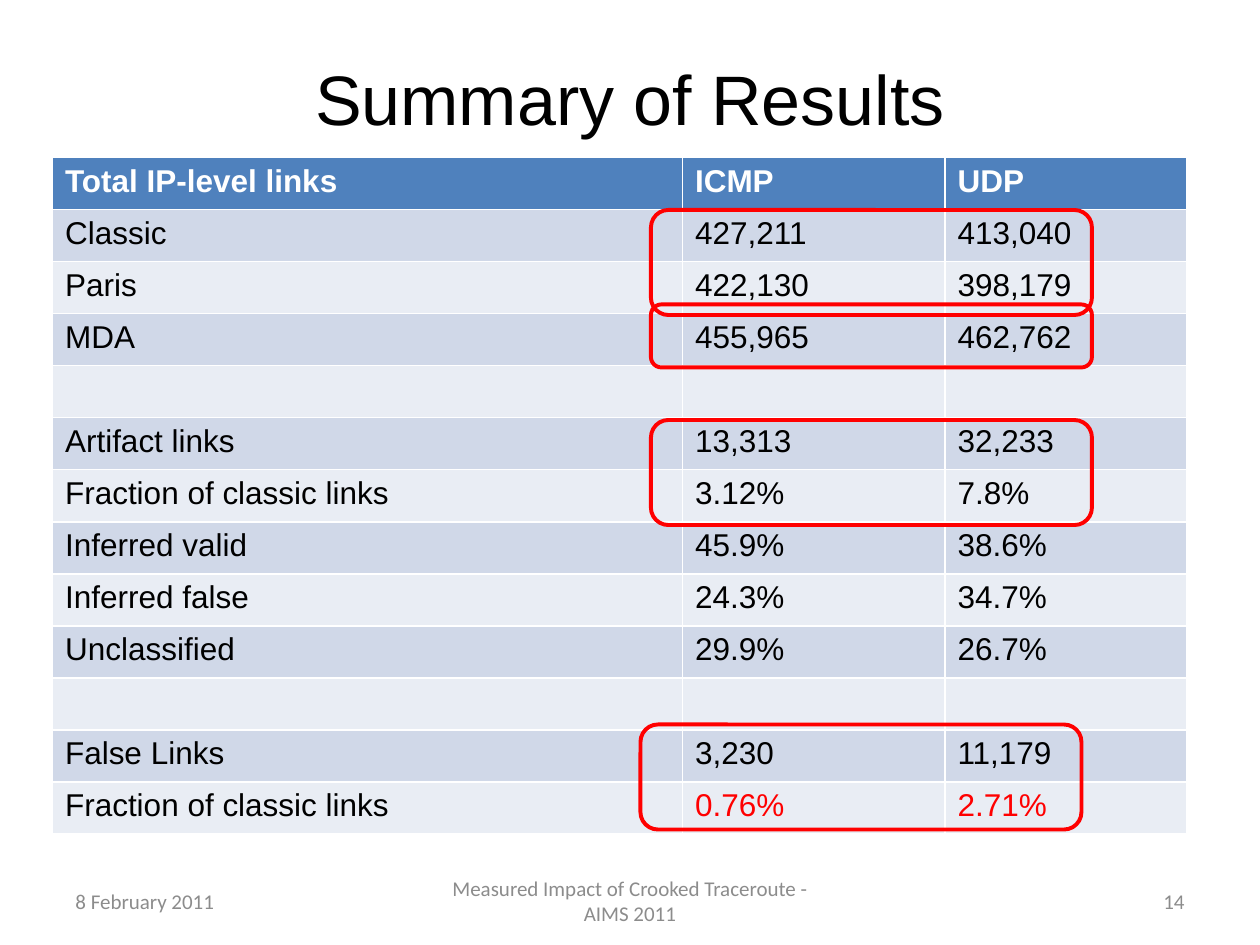
import pptx
import pptx.dml.color
import pptx.enum.shapes
import pptx.enum.text
import pptx.util

Pt = pptx.util.Pt
ALIGN = pptx.enum.text.PP_ALIGN
MIDDLE = pptx.enum.text.MSO_ANCHOR.MIDDLE

COLORS = {
    "text": "000000",
    "header": "4F81BD",
    "header_text": "FFFFFF",
    "odd_row": "D0D8E8",
    "even_row": "E9EDF4",
    "highlight": "FF0000",
    "footer": "8C8C8C",
}

RESULTS = [
    ("Total IP-level links", "ICMP", "UDP"),
    ("Classic", "427,211", "413,040"),
    ("Paris", "422,130", "398,179"),
    ("MDA", "455,965", "462,762"),
    ("", "", ""),
    ("Artifact links", "13,313", "32,233"),
    ("Fraction of classic links", "3.12%", "7.8%"),
    ("Inferred valid", "45.9%", "38.6%"),
    ("Inferred false", "24.3%", "34.7%"),
    ("Unclassified", "29.9%", "26.7%"),
    ("", "", ""),
    ("False Links", "3,230", "11,179"),
    ("Fraction of classic links", "0.76%", "2.71%"),
]
COLUMN_WIDTHS = (360, 150, 138)
ROW_HEIGHT = 29.74

# Left, top and height of each highlight frame
FRAMES = [(372, 240, 60), (372, 120, 60), (372, 174, 36), (366, 414, 60)]
FRAME_WIDTH = 252

# Text, left, width and alignment of each footer part
FOOTERS = [
    ("8 February 2011", 36, 168, ALIGN.LEFT),
    ("Measured Impact of Crooked Traceroute - AIMS 2011", 246, 228, ALIGN.CENTER),
    ("14", 516, 168, ALIGN.RIGHT),
]


def rgb(name):
    return pptx.dml.color.RGBColor.from_string(COLORS[name])


def write(frame, text, size, color, font="Arial", bold=False, align=ALIGN.LEFT):
    frame.text = text
    para = frame.paragraphs[0]
    para.alignment = align
    for span in para.runs:
        span.font.name = font
        span.font.size = Pt(size)
        span.font.bold = bold
        span.font.color.rgb = rgb(color)


def add_title(page, text):
    title = page.shapes.title
    title.left, title.top, title.width, title.height = Pt(36), Pt(21.6), Pt(648), Pt(68.4)
    title.text_frame.vertical_anchor = MIDDLE
    write(title.text_frame, text, 40, "text", align=ALIGN.CENTER)


def add_results_table(page):
    table = page.shapes.add_table(
        len(RESULTS), len(COLUMN_WIDTHS), Pt(30), Pt(90),
        Pt(sum(COLUMN_WIDTHS)), Pt(ROW_HEIGHT * len(RESULTS))).table
    for column, width in zip(table.columns, COLUMN_WIDTHS):
        column.width = Pt(width)
    last = len(RESULTS) - 1
    for i, values in enumerate(RESULTS):
        table.rows[i].height = Pt(ROW_HEIGHT)
        header = i == 0
        fill = "header" if header else "odd_row" if i % 2 else "even_row"
        for j, value in enumerate(values):
            cell = table.cell(i, j)
            cell.fill.solid()
            cell.fill.fore_color.rgb = rgb(fill)
            color = "header_text" if header else "text"
            if i == last and j > 0:
                color = "highlight"
            write(cell.text_frame, value, 18, color, bold=header)


def add_footer(page, text, left, width, align):
    box = page.shapes.add_textbox(Pt(left), Pt(500.5), Pt(width), Pt(28.75))
    box.text_frame.word_wrap = True
    box.text_frame.vertical_anchor = MIDDLE
    write(box.text_frame, text, 12, "footer", font="Calibri", align=align)


def add_frame(page, left, top, height):
    frame = page.shapes.add_shape(
        pptx.enum.shapes.MSO_SHAPE.ROUNDED_RECTANGLE,
        Pt(left), Pt(top), Pt(FRAME_WIDTH), Pt(height))
    frame.shadow.inherit = False
    frame.fill.background()
    frame.line.color.rgb = rgb("highlight")
    frame.line.width = Pt(2.25)


def main():
    deck = pptx.Presentation()
    deck.slide_width, deck.slide_height = Pt(720), Pt(540)
    page = deck.slides.add_slide(deck.slide_layouts.get_by_name("Title Only"))

    add_title(page, "Summary of Results")
    add_results_table(page)
    for footer in FOOTERS:
        add_footer(page, *footer)
    for frame in FRAMES:
        add_frame(page, *frame)

    deck.save("out.pptx")


if __name__ == "__main__":
    main()
